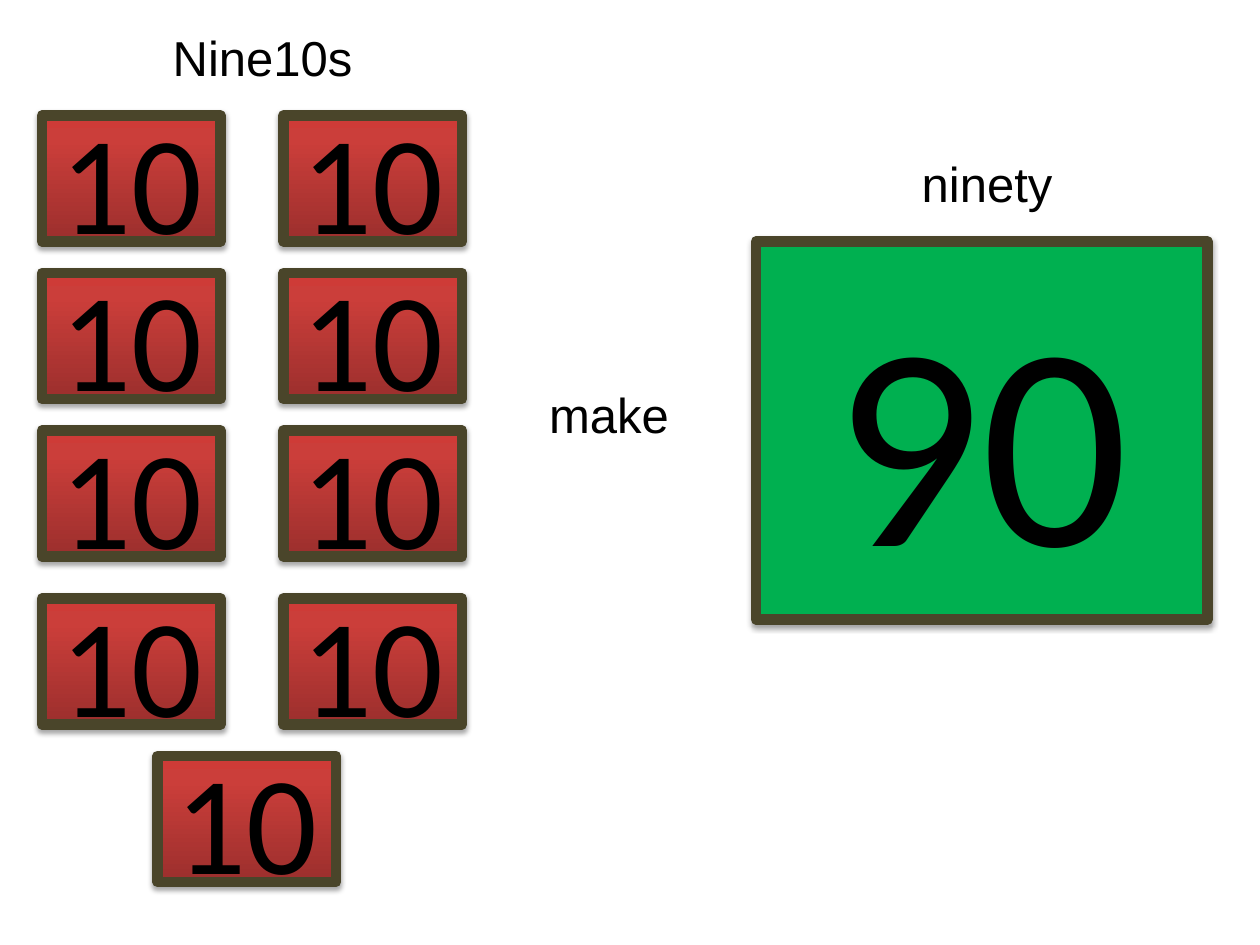
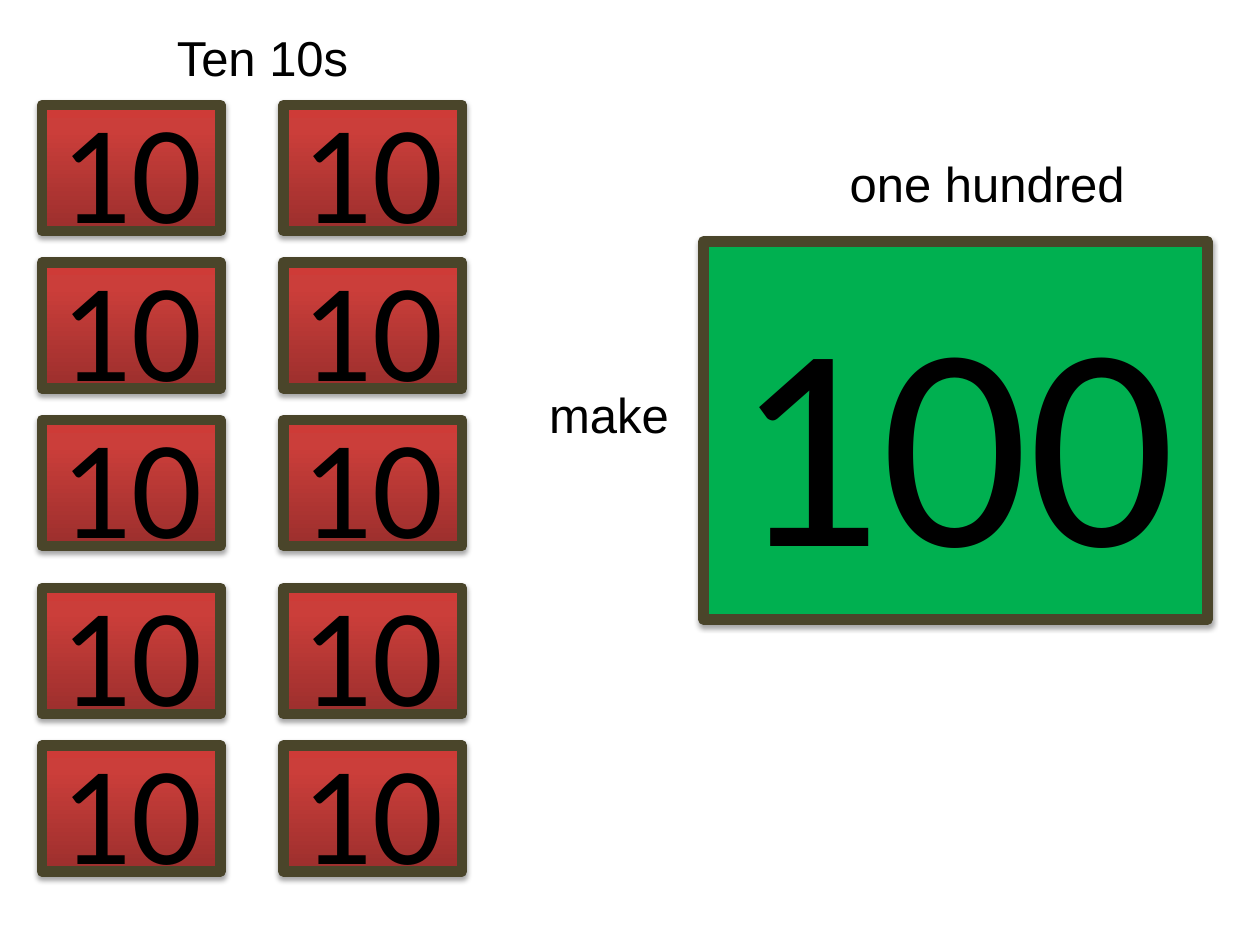
from copy import deepcopy

from lxml import etree
from pptx import Presentation
from pptx import util as u
from pptx.dml.color import RGBColor
from pptx.enum import shapes, text
from pptx.oxml.ns import qn

COLUMNS, ROWS = 120, 90
SLIDE_WIDTH, SLIDE_HEIGHT = u.Inches(10), u.Inches(7.5)

BLACK, FRAME, GREEN = "000000", "4A452A", "00B050"
RED_STOPS = ((0, "9C2F2D"), (0.8, "CB3E3A"), (1, "CE3B37"))

CARD_WIDTH, CARD_HEIGHT = 17, 12
LEFT_COLUMN, RIGHT_COLUMN, MIDDLE_COLUMN = 4, 27, 15
ROW_STEP, ROWS_ABOVE_BREAK = 15, 3
LABEL_WIDTH, LABEL_HEIGHT = 32, 6.84
TOTAL_TOP, TOTAL_RIGHT, TOTAL_HEIGHT = 23, 115, 36


def color(value):
    return RGBColor.from_string(value)


def grid_box(left, top, width, height):
    cell_width, cell_height = SLIDE_WIDTH / COLUMNS, SLIDE_HEIGHT / ROWS
    return (round(left * cell_width), round(top * cell_height),
            round(width * cell_width), round(height * cell_height))


def write(shape, words, size, font="Arial", fill=BLACK, anchor=text.MSO_ANCHOR.TOP):
    frame = shape.text_frame
    frame.word_wrap = True
    frame.vertical_anchor = anchor
    paragraph = frame.paragraphs[0]
    paragraph.alignment = text.PP_ALIGN.CENTER
    run = paragraph.add_run()
    run.text = words
    run.font.name = font
    run.font.size = u.Pt(size)
    run.font.color.rgb = color(fill)


def fill_gradient(shape, stops):
    shape.fill.gradient()
    shape.fill.gradient_angle = 90
    stop_list = shape._element.spPr.find(".//" + qn("a:gsLst"))
    stop_list.append(deepcopy(stop_list[-1]))
    for stop, (position, value) in zip(shape.fill.gradient_stops, stops):
        stop.position = position
        stop.color.rgb = color(value)


def add_soft_shadow(shape):
    shape.shadow.inherit = False
    effects = shape._element.spPr.find(qn("a:effectLst"))
    shadow = etree.SubElement(effects, qn("a:outerShdw"), blurRad=str(u.Pt(3.1)),
                              dist=str(u.Pt(1.8)), dir="5400000", rotWithShape="0")
    shade = etree.SubElement(shadow, qn("a:srgbClr"), val=BLACK)
    etree.SubElement(shade, qn("a:alpha"), val="35000")


def add_card(slide, number, box, size):
    card = slide.shapes.add_shape(shapes.MSO_SHAPE.RECTANGLE, *grid_box(*box))
    card.line.color.rgb = color(FRAME)
    card.line.width = u.Pt(6)
    add_soft_shadow(card)
    write(card, number, size, font="Calibri", anchor=text.MSO_ANCHOR.MIDDLE)
    return card


def add_ten(slide, left, top):
    card = add_card(slide, "10", (left, top, CARD_WIDTH, CARD_HEIGHT), size=80)
    fill_gradient(card, RED_STOPS)


def add_tens(slide, count, first_top):
    for index in range(count):
        row, side = divmod(index, 2)
        top = first_top + row * ROW_STEP + (row >= ROWS_ABOVE_BREAK)
        is_single = side == 0 and index == count - 1
        left = MIDDLE_COLUMN if is_single else (LEFT_COLUMN, RIGHT_COLUMN)[side]
        add_ten(slide, left, top)


def add_total(slide, number, width):
    box = (TOTAL_RIGHT - width, TOTAL_TOP, width, TOTAL_HEIGHT)
    card = add_card(slide, number, box, size=166)
    card.fill.solid()
    card.fill.fore_color.rgb = color(GREEN)


def add_label(slide, words, left, top):
    label = slide.shapes.add_textbox(*grid_box(left, top, LABEL_WIDTH, LABEL_HEIGHT))
    write(label, words, size=28)
    label.text_frame.auto_size = text.MSO_AUTO_SIZE.SHAPE_TO_FIT_TEXT


def add_tens_slide(presentation, count, heading, total_words, total_width, first_top):
    slide = presentation.slides.add_slide(presentation.slide_layouts[6])
    add_tens(slide, count, first_top)
    add_total(slide, str(count * 10), total_width)
    add_label(slide, heading, 9, 2)
    add_label(slide, "make", 42, 36)
    add_label(slide, total_words, 78, 14)


def main():
    presentation = Presentation()
    presentation.slide_width, presentation.slide_height = SLIDE_WIDTH, SLIDE_HEIGHT
    add_tens_slide(presentation, 9, "Nine10s", "ninety", total_width=43, first_top=11)
    add_tens_slide(presentation, 10, "Ten 10s", "one hundred", total_width=48, first_top=10)
    presentation.save("out.pptx")


if __name__ == "__main__":
    main()
